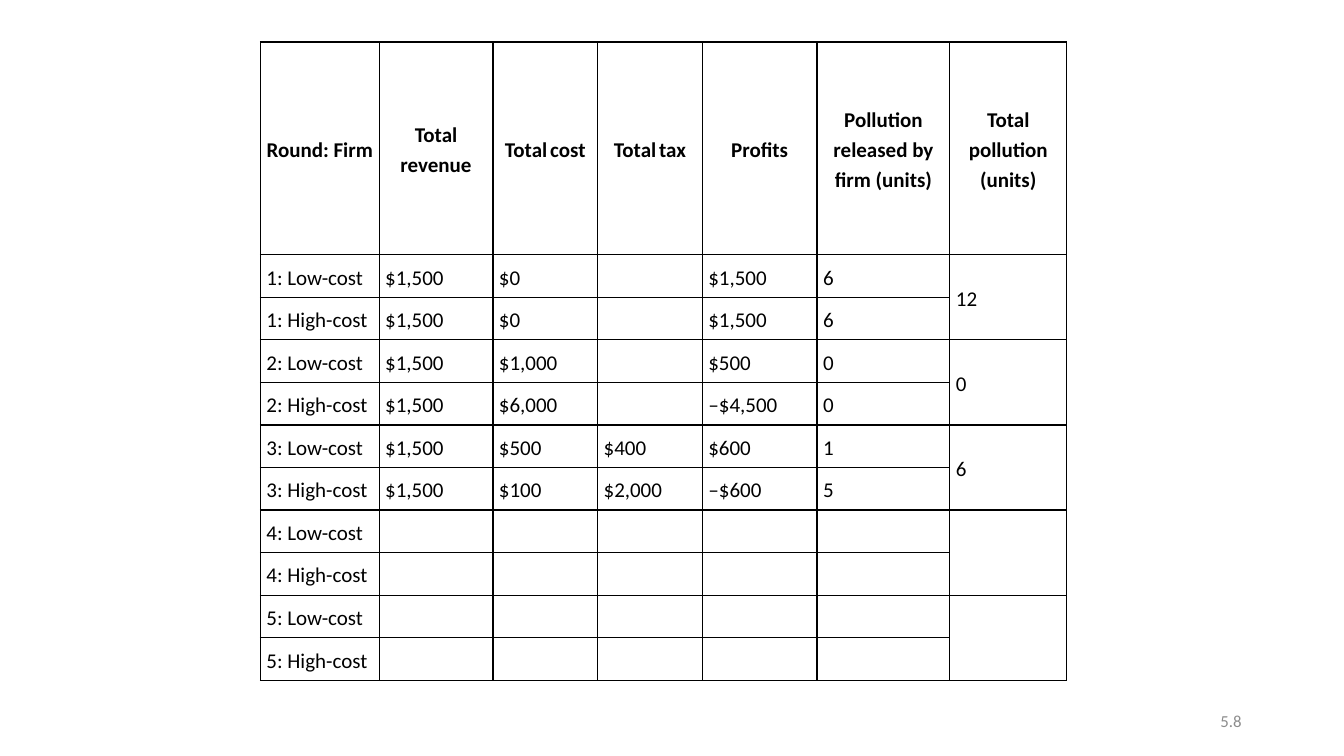
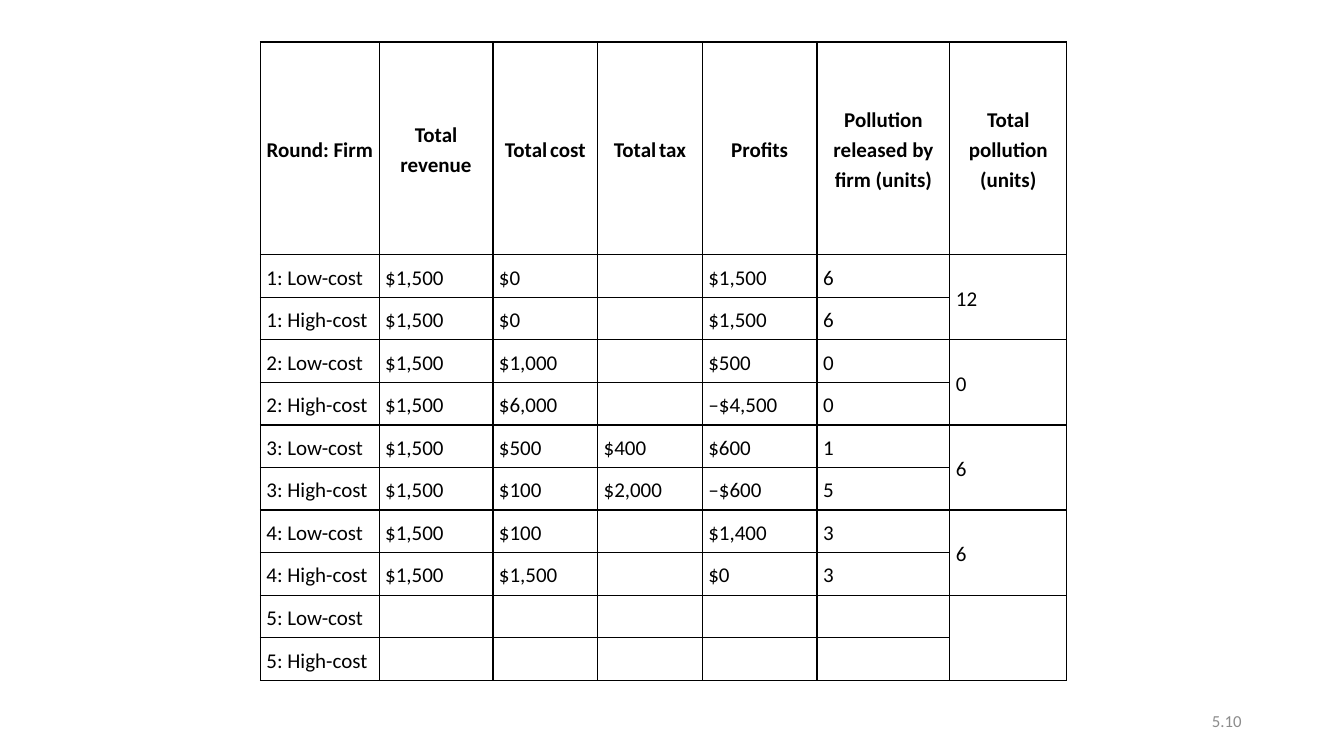
import pptx
import pptx.util
import pptx.dml.color
import pptx.enum.text
import pptx.oxml.ns
import lxml.etree

BLACK = pptx.dml.color.RGBColor(0x00, 0x00, 0x00)
WHITE = pptx.dml.color.RGBColor(0xFF, 0xFF, 0xFF)
GREY = pptx.dml.color.RGBColor(0x8C, 0x8C, 0x8C)
FONT = "Calibri"
ALIGN = pptx.enum.text.PP_ALIGN
MIDDLE = pptx.enum.text.MSO_ANCHOR.MIDDLE

# Slide grid: 160 columns by 90 rows of a twelfth of an inch
UNIT = pptx.util.Inches(1 / 12)
GRID_COLUMNS, GRID_ROWS = 160, 90
RESULTS_BOX = (31, 5, 96, 76)
NUMBER_BOX = (113, 83.4, 36, 4.8)

COLUMN_SHARES = (1.18, 1.13, 1.04, 1.04, 1.14, 1.32, 1.16)
HEADER_ROWS = 5  # the header is as tall as five body rows
FIRMS = ("Low-cost", "High-cost")
ROUND_COUNT = 5

TEXT_SIZE, GAP_SIZE, NUMBER_SIZE = 15, 9, 12

# Each heading is a list of (text, size) runs
HEADINGS = [
    [("Round: Firm", TEXT_SIZE)],
    *[[("Total", TEXT_SIZE), (" ", GAP_SIZE), (item, TEXT_SIZE)]
      for item in ("revenue", "cost", "tax")],
    [("Profits", TEXT_SIZE)],
    [("Pollution released by firm (units)", TEXT_SIZE)],
    [("Total pollution (units)", TEXT_SIZE)],
]

# Per round: revenue, cost, tax, profits, pollution for each firm; total pollution
ROUNDS_1_TO_3 = [
    (("$1,500", "$0", "", "$1,500", "6"),
     ("$1,500", "$0", "", "$1,500", "6"), "12"),
    (("$1,500", "$1,000", "", "$500", "0"),
     ("$1,500", "$6,000", "", "‒$4,500", "0"), "0"),
    (("$1,500", "$500", "$400", "$600", "1"),
     ("$1,500", "$100", "$2,000", "‒$600", "5"), "6"),
]
ROUND_4 = (("$1,500", "$100", "", "$1,400", "3"),
           ("$1,500", "$1,500", "", "$0", "3"), "6")
UNPLAYED = (("",) * 5, ("",) * 5, "")

SLIDES = [("5.8", ROUNDS_1_TO_3), ("5.10", ROUNDS_1_TO_3 + [ROUND_4])]


def on_grid(box):
    return [round(length * UNIT) for length in box]


def add_run(paragraph, text, size, color, bold=False):
    run = paragraph.add_run()
    run.text = text
    run.font.name = FONT
    run.font.size = pptx.util.Pt(size)
    run.font.bold = bold
    run.font.color.rgb = color


def style_cell(cell):
    """White cell with thin black borders and tight margins."""
    cell.margin_left = cell.margin_right = pptx.util.Inches(0.06)
    cell.margin_top = cell.margin_bottom = 0
    cell.vertical_anchor = MIDDLE
    properties = cell._tc.get_or_add_tcPr()
    qn = pptx.oxml.ns.qn
    for side in ("a:lnL", "a:lnR", "a:lnT", "a:lnB"):
        border = lxml.etree.SubElement(
            properties, qn(side), w=str(pptx.util.Pt(1)))
        paint = lxml.etree.SubElement(border, qn("a:solidFill"))
        lxml.etree.SubElement(paint, qn("a:srgbClr"), val=str(BLACK))
    cell.fill.solid()
    cell.fill.fore_color.rgb = WHITE


def write_cell(cell, runs, align=ALIGN.LEFT, bold=False):
    paragraph = cell.text_frame.paragraphs[0]
    paragraph.alignment = align
    paragraph.line_spacing = 1.15
    paragraph.space_after = pptx.util.Pt(10)
    for text, size in runs:
        if text:
            add_run(paragraph, text, size, BLACK, bold)


def add_results_table(slide, box, rounds):
    left, top, width, height = on_grid(box)
    body_count = ROUND_COUNT * len(FIRMS)
    results = slide.shapes.add_table(
        body_count + 1, len(HEADINGS), left, top, width, height).table
    results.first_row = results.horz_banding = False

    # Column widths and row heights as shares of the box
    for column, share in zip(results.columns, COLUMN_SHARES):
        column.width = round(width * share / sum(COLUMN_SHARES))
    for index, row in enumerate(results.rows):
        shares = HEADER_ROWS if index == 0 else 1
        row.height = round(height * shares / (HEADER_ROWS + body_count))
    for cell in results.iter_cells():
        style_cell(cell)

    # Header
    for column, runs in enumerate(HEADINGS):
        write_cell(results.cell(0, column), runs, ALIGN.CENTER, bold=True)

    # Two firms per round, sharing one total
    last = len(HEADINGS) - 1
    played = rounds + [UNPLAYED] * (ROUND_COUNT - len(rounds))
    for number, (*firm_results, total) in enumerate(played, 1):
        first_row = 1 + (number - 1) * len(FIRMS)
        for offset, (firm, values) in enumerate(zip(FIRMS, firm_results)):
            for column, text in enumerate((f"{number}: {firm}", *values)):
                write_cell(results.cell(first_row + offset, column),
                           [(text, TEXT_SIZE)])
        total_cell = results.cell(first_row, last)
        total_cell.merge(results.cell(first_row + len(FIRMS) - 1, last))
        write_cell(total_cell, [(total, TEXT_SIZE)])


def add_slide_number(slide, box, number):
    frame = slide.shapes.add_textbox(*on_grid(box)).text_frame
    frame.word_wrap = True
    frame.vertical_anchor = MIDDLE
    paragraph = frame.paragraphs[0]
    paragraph.alignment = ALIGN.RIGHT
    add_run(paragraph, number, NUMBER_SIZE, GREY)


def main():
    deck = pptx.Presentation()
    deck.slide_width, deck.slide_height = on_grid((GRID_COLUMNS, GRID_ROWS))
    for number, rounds in SLIDES:
        slide = deck.slides.add_slide(deck.slide_layouts[6])
        add_results_table(slide, RESULTS_BOX, rounds)
        add_slide_number(slide, NUMBER_BOX, number)
    deck.save("out.pptx")


if __name__ == "__main__":
    main()
